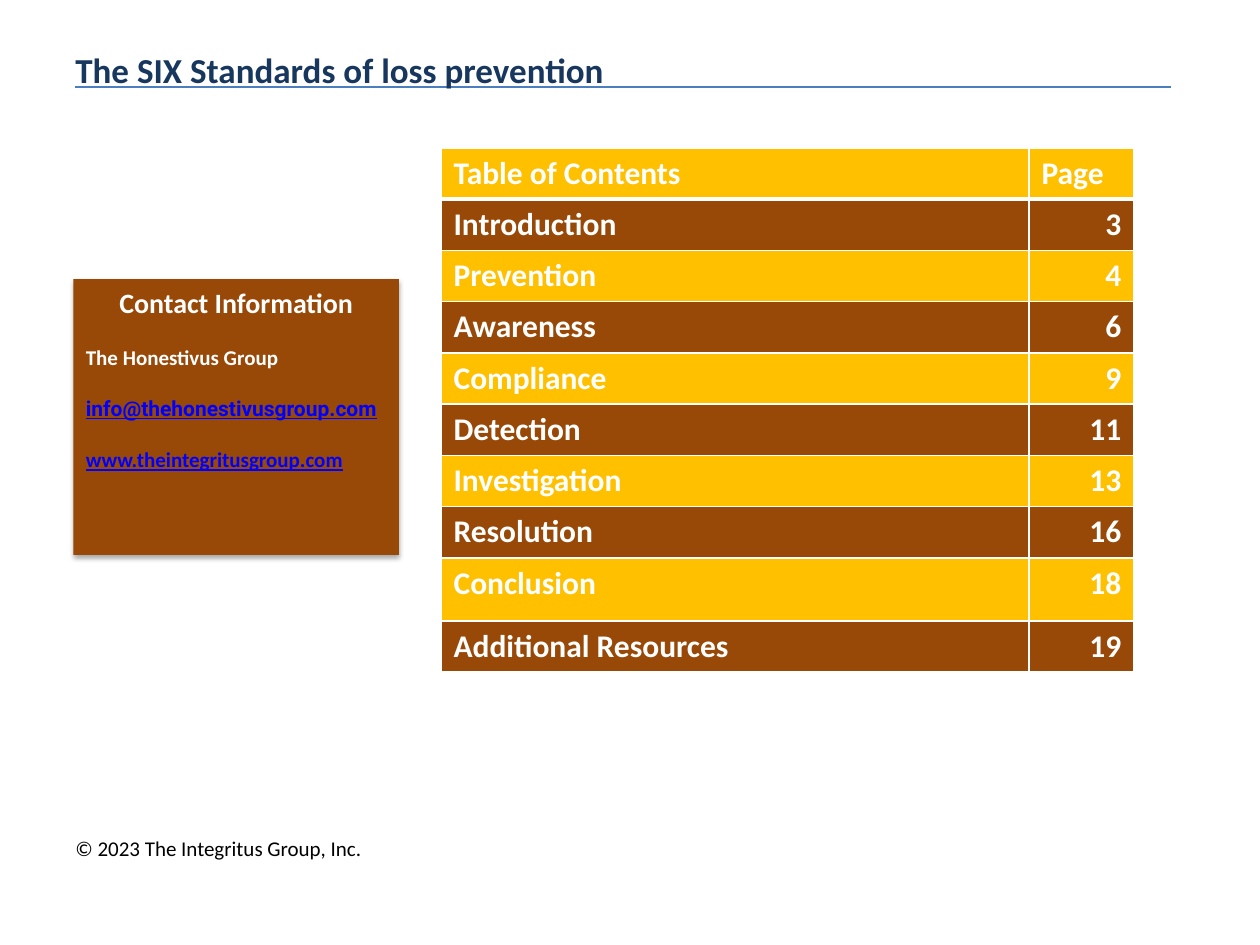
import pptx
import pptx.util
import pptx.dml.color
import pptx.enum.shapes
import pptx.enum.text
import pptx.oxml
import pptx.oxml.ns

Pt = pptx.util.Pt
RGBColor = pptx.dml.color.RGBColor
ALIGN = pptx.enum.text.PP_ALIGN
qn = pptx.oxml.ns.qn

WHITE = RGBColor(0xFF, 0xFF, 0xFF)
BLACK = RGBColor(0, 0, 0)
NAVY = RGBColor(0x17, 0x37, 0x5E)
STEEL = RGBColor(0x4B, 0x7E, 0xBC)
BROWN = RGBColor(0x98, 0x48, 0x07)
GOLD = RGBColor(0xFF, 0xC0, 0x00)
BLUE = RGBColor(0, 0, 0xFF)

TITLE = "The SIX Standards of loss prevention"
FOOTER = "© 2023 The Integritus Group, Inc."
CONTACT = [
    ("Contact Information", 16, "Calibri", WHITE, False),
    ("The Honestivus Group", 12, "Calibri", WHITE, False),
    ("info@thehonestivusgroup.com", 12, "Roboto", BLUE, True),
    ("www.theintegritusgroup.com", 12, "Calibri", BLUE, True),
]
PAGES = [
    ("Table of Contents", "Page"),
    ("Introduction", "3"),
    ("Prevention", "4"),
    ("Awareness", "6"),
    ("Compliance", "9"),
    ("Detection", "11"),
    ("Investigation", "13"),
    ("Resolution", "16"),
    ("Conclusion", "18"),
    ("Additional Resources", "19"),
]
WIDTHS = (336, 60)
ROW, TALL = 29.3, 36
TALL_ROW = 8
LINE_GAP = 14.65

A = 'xmlns:a="http://schemas.openxmlformats.org/drawingml/2006/main"'
SHADOW = (
    f'<a:effectLst {A}><a:outerShdw blurRad="{Pt(3.1)}" dist="{Pt(1.8)}" '
    'dir="5400000" rotWithShape="0"><a:srgbClr val="000000">'
    '<a:alpha val="35000"/></a:srgbClr></a:outerShdw></a:effectLst>'
)


def style(para, size, color, bold=True, face="Calibri", under=False):
    for run in para.runs:
        font = run.font
        font.name, font.size, font.bold = face, Pt(size), bold
        font.color.rgb = color
        if under:
            font.underline = True


def label(slide, text, box, size, color, bold):
    shape = slide.shapes.add_textbox(*map(Pt, box))
    frame = shape.text_frame
    frame.word_wrap = True
    frame.text = text
    style(frame.paragraphs[0], size, color, bold)


def border(cell, side, width):
    cell._tc.get_or_add_tcPr().append(pptx.oxml.parse_xml(
        f'<a:{side} {A} w="{Pt(width)}"><a:solidFill>'
        f'<a:srgbClr val="{WHITE}"/></a:solidFill></a:{side}>'))


def add_rule(slide):
    rule = slide.shapes.add_connector(
        pptx.enum.shapes.MSO_CONNECTOR.STRAIGHT,
        Pt(43), Pt(49.7), Pt(669), Pt(49.7))
    rule.line.color.rgb = STEEL
    rule.line.width = Pt(0.75)
    rule._element.spPr.append(pptx.oxml.parse_xml(f"<a:effectLst {A}/>"))


def add_contact(slide):
    card = slide.shapes.add_shape(
        pptx.enum.shapes.MSO_SHAPE.RECTANGLE,
        Pt(42), Pt(159.6), Pt(186), Pt(157.6))
    card.fill.solid()
    card.fill.fore_color.rgb = BROWN
    card.line.fill.background()
    card._element.spPr.append(pptx.oxml.parse_xml(SHADOW))
    frame = card.text_frame
    frame.word_wrap = True
    frame.vertical_anchor = pptx.enum.text.MSO_ANCHOR.TOP
    for i, (text, size, face, color, under) in enumerate(CONTACT):
        para = frame.add_paragraph() if i else frame.paragraphs[0]
        para.text = text
        para.alignment = ALIGN.LEFT if i else ALIGN.CENTER
        if i:
            para.space_before = Pt(LINE_GAP)
        style(para, size, color, True, face, under)


def add_pages(slide):
    count = len(PAGES)
    high = ROW * (count - 1) + TALL
    table = slide.shapes.add_table(
        count, len(WIDTHS), Pt(252), Pt(84.5),
        Pt(sum(WIDTHS)), Pt(high)).table
    for col, width in zip(table.columns, WIDTHS):
        col.width = Pt(width)
    for r, row in enumerate(PAGES):
        table.rows[r].height = Pt(TALL if r == TALL_ROW else ROW)
        for c, text in enumerate(row):
            cell = table.cell(r, c)
            cell.text = text
            para = cell.text_frame.paragraphs[0]
            para.alignment = ALIGN.RIGHT if r and c else ALIGN.LEFT
            style(para, 18, WHITE)
            border(cell, "lnL", 1)
            border(cell, "lnR", 1)
            border(cell, "lnT", 3 if r == 1 else 1)
            border(cell, "lnB", 3 if r == 0 else 1)
            cell.fill.solid()
            cell.fill.fore_color.rgb = BROWN if r % 2 else GOLD


def main():
    deck = pptx.Presentation()
    deck.slide_width, deck.slide_height = Pt(720), Pt(540)
    slide = deck.slides.add_slide(deck.slide_layouts[6])
    add_rule(slide)
    add_contact(slide)
    label(slide, TITLE, (36, 24, 648, 44.6), 20, NAVY, True)
    label(slide, FOOTER, (36, 474, 282, 21.8), 12, BLACK, False)
    add_pages(slide)
    deck.save("out.pptx")


if __name__ == "__main__":
    main()
